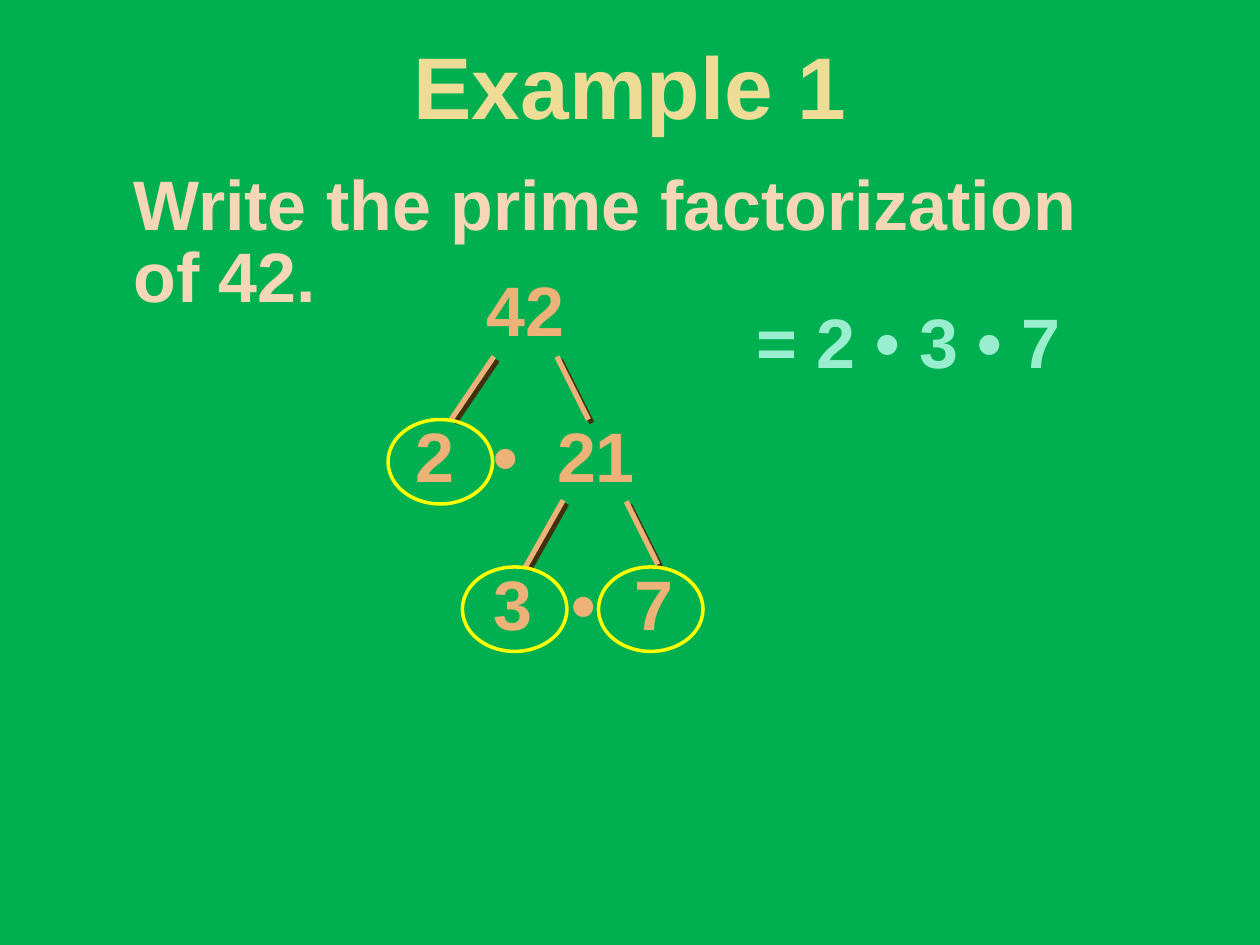
from dataclasses import dataclass

from lxml.etree import SubElement
from pptx import Presentation
from pptx.dml.color import RGBColor
from pptx.enum.shapes import MSO_CONNECTOR, MSO_SHAPE
from pptx.enum.text import MSO_ANCHOR, MSO_AUTO_SIZE, PP_ALIGN
from pptx.oxml.ns import qn
from pptx.util import Inches, Pt


@dataclass(frozen=True)
class Theme:
    font: str = "Arial"
    background: str = "00B050"
    title: str = "EEDB96"
    question: str = "F5D6B7"
    answer: str = "9AEED0"
    tree: str = "EDB277"
    circle: str = "FFFF00"
    text_shadow: str = "000000"
    branch_shadow: str = "432E0F"
    title_size: int = 50
    body_size: int = 40
    wide_gap: int = 1112  # extra width of a gap, in hundredths of a point


THEME = Theme()
TREE_WIDTH = 4
ROW_HEIGHT = 0.67


def rgb(color):
    return RGBColor.from_string(color)


def add_shadow(properties, color):
    """Cast a hard shadow down and to the right."""
    effects = SubElement(properties, qn("a:effectLst"))
    shadow = SubElement(effects, qn("a:outerShdw"), blurRad="0",
                        dist=str(Pt(2.8)), dir="2700000", algn="ctr")
    SubElement(shadow, qn("a:srgbClr"), val=color)


def format_run(run, color, size):
    run.font.name = THEME.font
    run.font.size = Pt(size)
    run.font.bold = True
    run.font.color.rgb = rgb(color)
    properties = run.font._element
    add_shadow(properties, THEME.text_shadow)
    # The schema wants effects between the fill and the typeface.
    properties.append(properties.find(qn("a:latin")))


def format_text(frame, color, size, align=PP_ALIGN.CENTER):
    frame.word_wrap = True
    frame.auto_size = MSO_AUTO_SIZE.SHAPE_TO_FIT_TEXT
    frame.vertical_anchor = MSO_ANCHOR.TOP
    paragraph = frame.paragraphs[0]
    paragraph.alignment = align
    paragraph.line_spacing = 0.85
    paragraph.space_before = Pt(0)
    before = paragraph._p.pPr.find(qn("a:spcBef"))
    before.remove(before[0])
    SubElement(before, qn("a:spcPct"), val="45000")
    for run in paragraph.runs:
        format_run(run, color, size)


def place(shape, left, top, width, height):
    shape.left, shape.top = Inches(left), Inches(top)
    shape.width, shape.height = Inches(width), Inches(height)


def add_title(slide, text):
    title = slide.shapes.title
    place(title, 0.94, 0.33, 8.12, 0.81)
    title.text_frame.text = text
    format_text(title.text_frame, THEME.title, THEME.title_size)


def add_text(slide, text, box, color, align=PP_ALIGN.CENTER):
    label = slide.shapes.add_textbox(*map(Inches, box))
    label.text_frame.text = text
    format_text(label.text_frame, color, THEME.body_size, align)


def add_factors(slide, factors, left, top):
    """Write one tree row, with wide gaps around the multiplication dot."""
    row = slide.shapes.add_textbox(
        *map(Inches, (left, top, TREE_WIDTH, ROW_HEIGHT)))
    paragraph = row.text_frame.paragraphs[0]
    for part in (factors[0], " ", "•", " ", factors[1]):
        paragraph.add_run().text = part
    format_text(row.text_frame, THEME.tree, THEME.body_size)
    for gap in paragraph.runs[1::2]:
        gap.font._element.set("spc", str(THEME.wide_gap))


def add_branch(slide, start, end):
    branch = slide.shapes.add_connector(
        MSO_CONNECTOR.STRAIGHT, *map(Inches, start + end))
    branch.line.color.rgb = rgb(THEME.tree)
    branch.line.width = Pt(3)
    add_shadow(branch._element.spPr, THEME.branch_shadow)


def circle_prime(slide, left, top):
    circle = slide.shapes.add_shape(
        MSO_SHAPE.OVAL, *map(Inches, (left, top, 0.83, ROW_HEIGHT)))
    circle.shadow.inherit = False
    circle.fill.background()
    circle.line.color.rgb = rgb(THEME.circle)
    circle.line.width = Pt(2)


def main():
    presentation = Presentation()
    presentation.slide_width = Inches(10)
    presentation.slide_height = Inches(7.5)
    slide = presentation.slides.add_slide(presentation.slide_layouts[5])
    slide.background.fill.solid()
    slide.background.fill.fore_color.rgb = rgb(THEME.background)

    add_title(slide, "Example 1")
    add_text(slide, "Write the prime factorization of 42.",
             (0.96, 1.33, 8.08, 1.23), THEME.question, PP_ALIGN.LEFT)
    add_text(slide, "= 2 • 3 • 7", (5, 2.42, 4.42, ROW_HEIGHT), THEME.answer)

    add_text(slide, "42", (2.17, 2.17, TREE_WIDTH, ROW_HEIGHT), THEME.tree)
    add_factors(slide, ("2", "21"), 2.17, 3.33)
    add_factors(slide, ("3", "7"), 2.63, 4.5)

    for start, end in (
        ((3.92, 2.83), (3.58, 3.33)),
        ((4.42, 2.83), (4.67, 3.33)),
        ((4.47, 3.97), (4.17, 4.5)),
        ((4.97, 3.98), (5.22, 4.48)),
    ):
        add_branch(slide, start, end)

    for left, top in ((3.08, 3.33), (3.67, 4.5), (4.75, 4.5)):
        circle_prime(slide, left, top)

    presentation.save("out.pptx")


if __name__ == "__main__":
    main()
